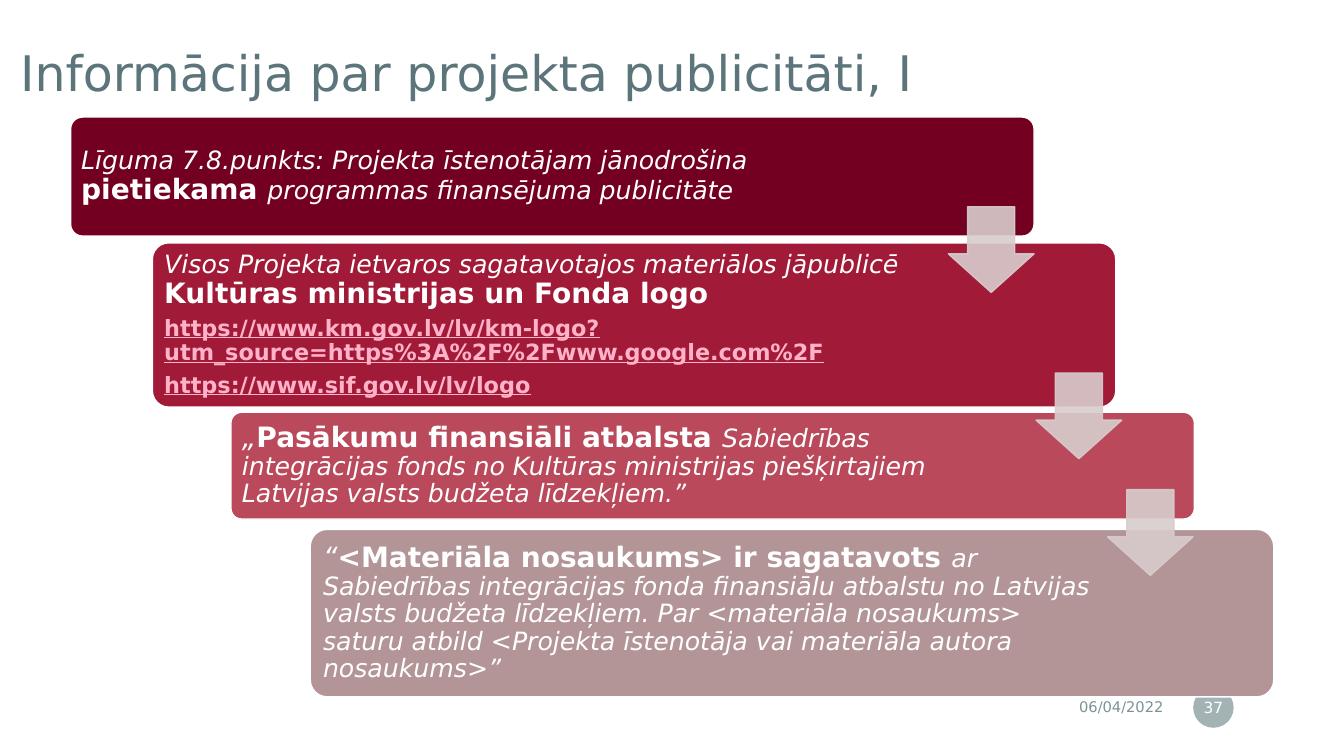
from lxml.etree import SubElement
from pptx import Presentation
from pptx.dml.color import RGBColor
from pptx.enum.shapes import MSO_SHAPE
from pptx.enum.text import MSO_ANCHOR, PP_ALIGN
from pptx.oxml.ns import qn
from pptx.util import Cm, Pt

FONT = "DejaVu Sans"
WHITE = RGBColor(0xFF, 0xFF, 0xFF)
TITLE = RGBColor(0x5B, 0x75, 0x7A)
FOOTER = RGBColor(0x7C, 0x93, 0x96)
LINK = RGBColor(0xFF, 0xB2, 0xC8)
ARROW = RGBColor(0xD8, 0xCC, 0xCD)
WINE = RGBColor(0x74, 0x00, 0x21)
CRIMSON = RGBColor(0xA1, 0x1A, 0x38)
ROSE = RGBColor(0xB9, 0x49, 0x5B)
DUSTY = RGBColor(0xB3, 0x95, 0x98)

CARD_WIDTH = 24.28
ARROW_SIZE = 2.16

# Run styles: size, bold, italic, underline, colour
QUIET = (18, False, True, False, WHITE)
QUOTE = (20, False, True, False, WHITE)
STRONG = (20, True, False, False, WHITE)
ADDRESS = (16, True, False, True, LINK)

# Cards: left, top, height, text width, text inset, fill, paragraphs of styled spans
CARDS = [
    (1.78, 2.95, 3.0, 20.45, 0.18, WINE, [
        [("Līguma 7.8.punkts: Projekta īstenotājam jānodrošina ", QUIET),
         ("pietiekama ", STRONG),
         ("programmas finansējuma publicitāte", QUIET)],
    ]),
    (3.84, 6.12, 4.14, 19.86, 0.18, CRIMSON, [
        [("Visos Projekta ietvaros sagatavotajos materiālos jāpublicē ", QUIET),
         ("Kultūras ministrijas un Fonda logo", STRONG)],
        [("https://www.km.gov.lv/lv/km-logo?utm_source="
          "https%3A%2F%2Fwww.google.com%2F", ADDRESS)],
        [("https://www.sif.gov.lv/lv/logo", ADDRESS)],
    ]),
    (5.82, 10.39, 2.69, 19.96, 0.2, ROSE, [
        [("„", QUOTE),
         ("Pasākumu finansiāli atbalsta ", STRONG),
         ("Sabiedrības integrācijas fonds no Kultūras ministrijas "
          "piešķirtajiem Latvijas valsts budžeta līdzekļiem.”", QUIET)],
    ]),
    (7.82, 13.34, 4.22, 19.86, 0.2, DUSTY, [
        [("“", QUOTE),
         ("<Materiāla nosaukums> ir sagatavots ", STRONG),
         ("ar Sabiedrības integrācijas fonda finansiālu atbalstu no Latvijas "
          "valsts budžeta līdzekļiem. Par <materiāla nosaukums> saturu atbild "
          "<Projekta īstenotāja vai materiāla autora nosaukums>”", QUIET)],
    ]),
]
ARROWS = [(23.9, 5.21), (26.11, 9.4), (27.91, 12.34)]


def set_insets(frame, side, upright):
    frame.margin_left = frame.margin_right = Cm(side)
    frame.margin_top = frame.margin_bottom = Cm(upright)


def add_box(page, left, top, width, height, side=0.25, upright=0.13):
    box = page.shapes.add_textbox(Cm(left), Cm(top), Cm(width), Cm(height))
    frame = box.text_frame
    frame.word_wrap = True
    frame.vertical_anchor = MSO_ANCHOR.MIDDLE
    set_insets(frame, side, upright)
    return frame


def write_line(frame, text, size, color, align=PP_ALIGN.LEFT):
    frame.text = text
    para = frame.paragraphs[0]
    para.alignment = align
    font = para.runs[0].font
    font.name, font.size = FONT, Pt(size)
    font.color.rgb = color


def add_shape(page, kind, left, top, width, height, fill, line=None):
    shape = page.shapes.add_shape(kind, Cm(left), Cm(top), Cm(width), Cm(height))
    shape.shadow.inherit = False
    shape.fill.solid()
    shape.fill.fore_color.rgb = fill
    if line is None:
        shape.line.fill.background()
    else:
        shape.line.color.rgb = line
        shape.line.width = Pt(1)
    return shape


def set_opacity(shape, percent):
    for color in shape._element.spPr.iter(qn("a:srgbClr")):
        SubElement(color, qn("a:alpha")).set("val", str(percent * 1000))


def write_spans(para, spans):
    para.line_spacing = 0.9
    for text, (size, bold, italic, underline, color) in spans:
        span = para.add_run()
        span.text = text
        font = span.font
        font.name, font.size = FONT, Pt(size)
        font.bold, font.italic, font.underline = bold, italic, underline
        font.color.rgb = color


def add_card(page, left, top, height, text_width, inset, fill, paragraphs):
    card = add_shape(page, MSO_SHAPE.ROUNDED_RECTANGLE,
                     left, top, CARD_WIDTH, height, fill, WHITE)
    card.adjustments[0] = 0.1
    # The text starts inside the rounded corner
    corner = 0.029 * height
    frame = add_box(page, left + corner, top + corner,
                    text_width, height - 2 * corner, inset, inset)
    for index, spans in enumerate(paragraphs):
        para = frame.add_paragraph() if index else frame.paragraphs[0]
        write_spans(para, spans)
        if index < len(paragraphs) - 1:
            para.space_after = Pt(6)


def add_arrow(page, left, top):
    arrow = add_shape(page, MSO_SHAPE.DOWN_ARROW,
                      left, top, ARROW_SIZE, ARROW_SIZE, ARROW, ARROW)
    arrow.adjustments[0] = 0.55
    arrow.adjustments[1] = 0.45
    set_opacity(arrow, 90)


def add_page_number(page):
    badge = add_shape(page, MSO_SHAPE.OVAL, 30.07, 17.32, 1.02, 1.02, FOOTER)
    set_opacity(badge, 70)
    frame = badge.text_frame
    frame.vertical_anchor = MSO_ANCHOR.MIDDLE
    set_insets(frame, 0.05, 0.13)
    write_line(frame, "37", 11, WHITE, PP_ALIGN.CENTER)


def main():
    deck = Presentation()
    deck.slide_width, deck.slide_height = Cm(33.87), Cm(19.05)
    page = deck.slides.add_slide(deck.slide_layouts[6])

    # Title
    title = add_box(page, 0, 1.02, 28.98, 3.02, 0.51, 0.22)
    title.vertical_anchor = MSO_ANCHOR.TOP
    write_line(title, "Informācija par projekta publicitāti, I", 35, TITLE)
    title.paragraphs[0].line_spacing = 0.9

    # Footer
    date = add_box(page, 21.92, 17.37, 7.65, 0.89)
    write_line(date, "06/04/2022", 10.5, FOOTER, PP_ALIGN.RIGHT)
    add_page_number(page)

    # Staircase of cards, then the arrows that join them
    for card in CARDS:
        add_card(page, *card)
    for left, top in ARROWS:
        add_arrow(page, left, top)

    deck.save("out.pptx")


if __name__ == "__main__":
    main()
